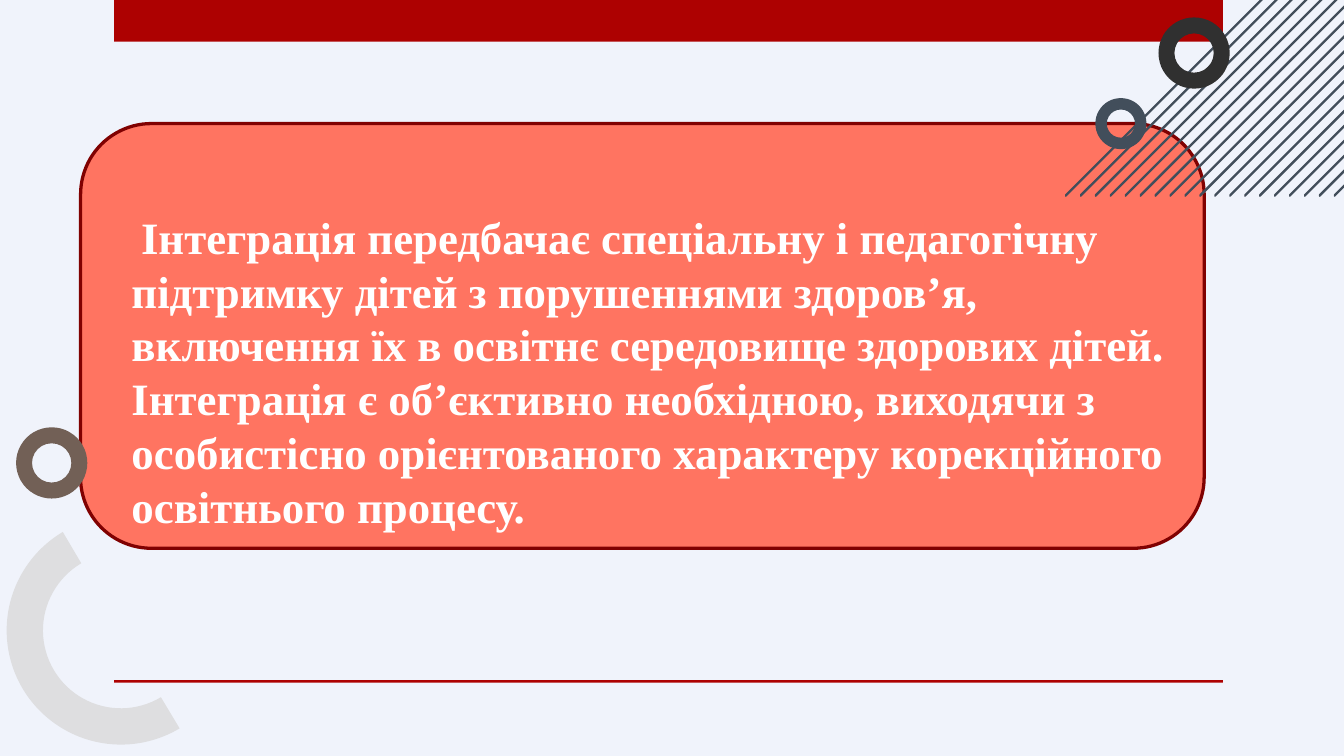
from pptx import Presentation
from pptx.dml.color import RGBColor
from pptx.enum.shapes import MSO_SHAPE
from pptx.enum.text import MSO_ANCHOR, PP_ALIGN
from pptx.util import Inches, Pt

COLORS = {
    "background": "F0F3FB",
    "red": "AD0101",
    "coral": "FF7461",
    "maroon": "800101",
    "slate": "424E5B",
    "silver": "DEDEE0",
    "brown": "726056",
    "charcoal": "303030",
    "white": "FFFFFF",
}
STATEMENT = (
    "Інтеграція передбачає спеціальну і педагогічну підтримку дітей з порушеннями "
    "здоров’я, включення їх в освітнє середовище здорових дітей. Інтеграція є "
    "об’єктивно необхідною, виходячи з особистісно орієнтованого характеру "
    "корекційного освітнього процесу."
)
STRIPE_COUNT = 19
STRIPE_LEFT = 7.93
STRIPE_STEP = 2 / 18


def color(name):
    return RGBColor.from_string(COLORS[name])


def paint(shape, fill, line=None, width=0):
    shape.shadow.inherit = False
    shape.fill.solid()
    shape.fill.fore_color.rgb = color(fill)
    if line:
        shape.line.color.rgb = color(line)
        shape.line.width = Pt(width)
    else:
        shape.line.fill.background()


def add_shape(page, kind, bounds, fill, adjustments=()):
    shape = page.shapes.add_shape(kind, *map(Inches, bounds))
    for index, value in enumerate(adjustments):
        shape.adjustments[index] = value
    paint(shape, fill)
    return shape


def add_ring(page, left, top, size, fill):
    add_shape(page, MSO_SHAPE.DONUT, (left, top, size, size), fill, [0.224])


def add_stripes(page):
    group = page.shapes.add_group_shape()
    for index in range(STRIPE_COUNT):
        left = STRIPE_LEFT + index * STRIPE_STEP
        corners = [
            (Inches(left + across), Inches(down))
            for across, down in [(1.62, -0.17), (0, 1.45), (0, 1.46), (1.62, -0.16)]
        ]
        builder = group.shapes.build_freeform(*corners[0])
        builder.add_line_segments(corners[1:], close=True)
        paint(builder.convert_to_shape(), "red", "slate", 0.75)


def add_span(para, text, font, size, fill):
    span = para.add_run()
    span.text = text
    span.font.name = font
    span.font.size = Pt(size)
    span.font.bold = True
    span.font.color.rgb = color(fill)


def add_statement(page):
    box = page.shapes.add_textbox(Inches(0.88), Inches(1.46), Inches(8.09), Inches(2.25))
    frame = box.text_frame
    frame.word_wrap = True
    frame.vertical_anchor = MSO_ANCHOR.TOP
    frame.margin_left = frame.margin_right = Inches(0.1)
    frame.margin_top = frame.margin_bottom = Inches(0.1)
    para = frame.paragraphs[0]
    para.alignment = PP_ALIGN.LEFT
    para.line_spacing = 1.0
    add_span(para, " ", "Montserrat", 18, "charcoal")
    add_span(para, STATEMENT, "Times New Roman", 24, "white")


def main():
    deck = Presentation()
    deck.slide_width = Inches(10)
    deck.slide_height = Inches(10) * 9 // 16
    page = deck.slides.add_slide(deck.slide_layouts.get_by_name("Blank"))
    page.background.fill.solid()
    page.background.fill.fore_color.rgb = color("background")

    for top, height in [(0, 0.31), (5.06, 0.02)]:
        add_shape(page, MSO_SHAPE.RECTANGLE, (0.85, top, 8.25, height), "red")
    panel = add_shape(page, MSO_SHAPE.ROUNDED_RECTANGLE, (0.6, 0.92, 8.36, 3.16), "coral")
    paint(panel, "coral", "maroon", 1.75)
    add_stripes(page)
    arc = add_shape(
        page, MSO_SHAPE.BLOCK_ARC, (0.05, 3.84, 1.7, 1.7), "silver", [108, 0.208, 0.159]
    )
    arc.rotation = 239.1
    add_statement(page)
    add_ring(page, 0.12, 3.18, 0.53, "brown")
    add_ring(page, 8.62, 0.13, 0.53, "charcoal")
    add_ring(page, 8.15, 0.73, 0.38, "slate")
    deck.save("out.pptx")


if __name__ == "__main__":
    main()
